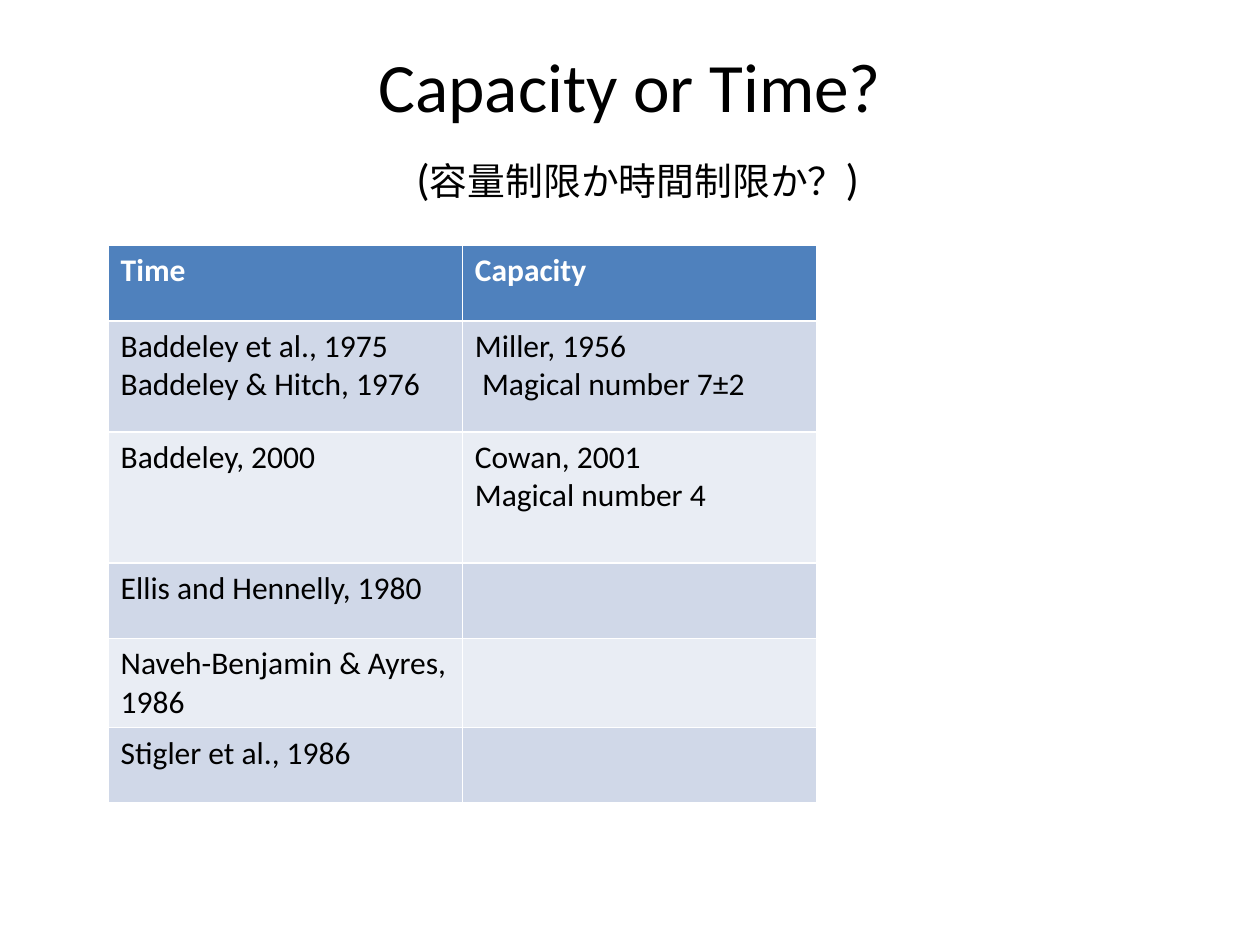
from pptx import Presentation
from pptx import util as u
from pptx.dml.color import RGBColor
from pptx.enum import text

THEME = {
    "font": "Calibri",
    "ink": "000000",
    "header_ink": "FFFFFF",
    "header_fill": "4F81BD",
    "bands": ("D0D8E8", "E9EDF4"),
    "title": 39.6,
    "bracket": 25.2,
    "subtitle": 21.6,
    "body": 18,
}

TITLE = "Capacity or Time?"
SUBTITLE = [
    (" ", "title"),
    ("(", "bracket"),
    ("容量制限か時間制限か？", "subtitle"),
    (")", "bracket"),
]
STUDIES = [
    (1.52, ["Time"], ["Capacity"]),
    (2.24, ["Baddeley et al., 1975", "Baddeley & Hitch, 1976"],
     ["Miller, 1956", " Magical number 7±2"]),
    (2.64, ["Baddeley, 2000"], ["Cowan, 2001", "Magical number 4"]),
    (1.52, ["Ellis and Hennelly, 1980"], []),
    (1.8, ["Naveh-Benjamin & Ayres, 1986"], []),
    (1.52, ["Stigler et al., 1986"], []),
]
COLUMN_WIDTH = 7.14


def write(paragraph, words, size="body", color=THEME["ink"], bold=False):
    run = paragraph.add_run()
    run.text = words
    run.font.name = THEME["font"]
    run.font.size = u.Pt(THEME[size])
    run.font.bold = bold
    run.font.color.rgb = RGBColor.from_string(color)


def add_heading(slide):
    heading = slide.shapes.add_textbox(u.Cm(1.27), u.Cm(0.76), u.Cm(22.86), u.Cm(3.56))
    frame = heading.text_frame
    frame.word_wrap = True
    frame.vertical_anchor = text.MSO_ANCHOR.MIDDLE
    paragraph = frame.paragraphs[0]
    paragraph.alignment = text.PP_ALIGN.CENTER
    write(paragraph, TITLE, size="title")
    paragraph.add_line_break()
    for words, size in SUBTITLE:
        write(paragraph, words, size=size)


def add_studies(slide):
    total_height = sum(height for height, *_ in STUDIES)
    studies = slide.shapes.add_table(
        len(STUDIES), 2, u.Cm(2.18), u.Cm(4.95),
        u.Cm(2 * COLUMN_WIDTH), u.Cm(total_height)).table
    for column in studies.columns:
        column.width = u.Cm(COLUMN_WIDTH)
    for row, (height, *entries) in enumerate(STUDIES):
        studies.rows[row].height = u.Cm(height)
        header = row == 0
        fill = THEME["header_fill"] if header else THEME["bands"][(row - 1) % 2]
        ink = THEME["header_ink"] if header else THEME["ink"]
        for column, lines in enumerate(entries):
            cell = studies.cell(row, column)
            cell.fill.solid()
            cell.fill.fore_color.rgb = RGBColor.from_string(fill)
            frame = cell.text_frame
            for index, line in enumerate(lines):
                paragraph = frame.add_paragraph() if index else frame.paragraphs[0]
                write(paragraph, line, color=ink, bold=header)


def main():
    deck = Presentation()
    deck.slide_width, deck.slide_height = u.Cm(25.4), u.Cm(19.05)
    slide = deck.slides.add_slide(deck.slide_layouts[6])
    add_heading(slide)
    add_studies(slide)
    deck.save("out.pptx")


if __name__ == "__main__":
    main()
